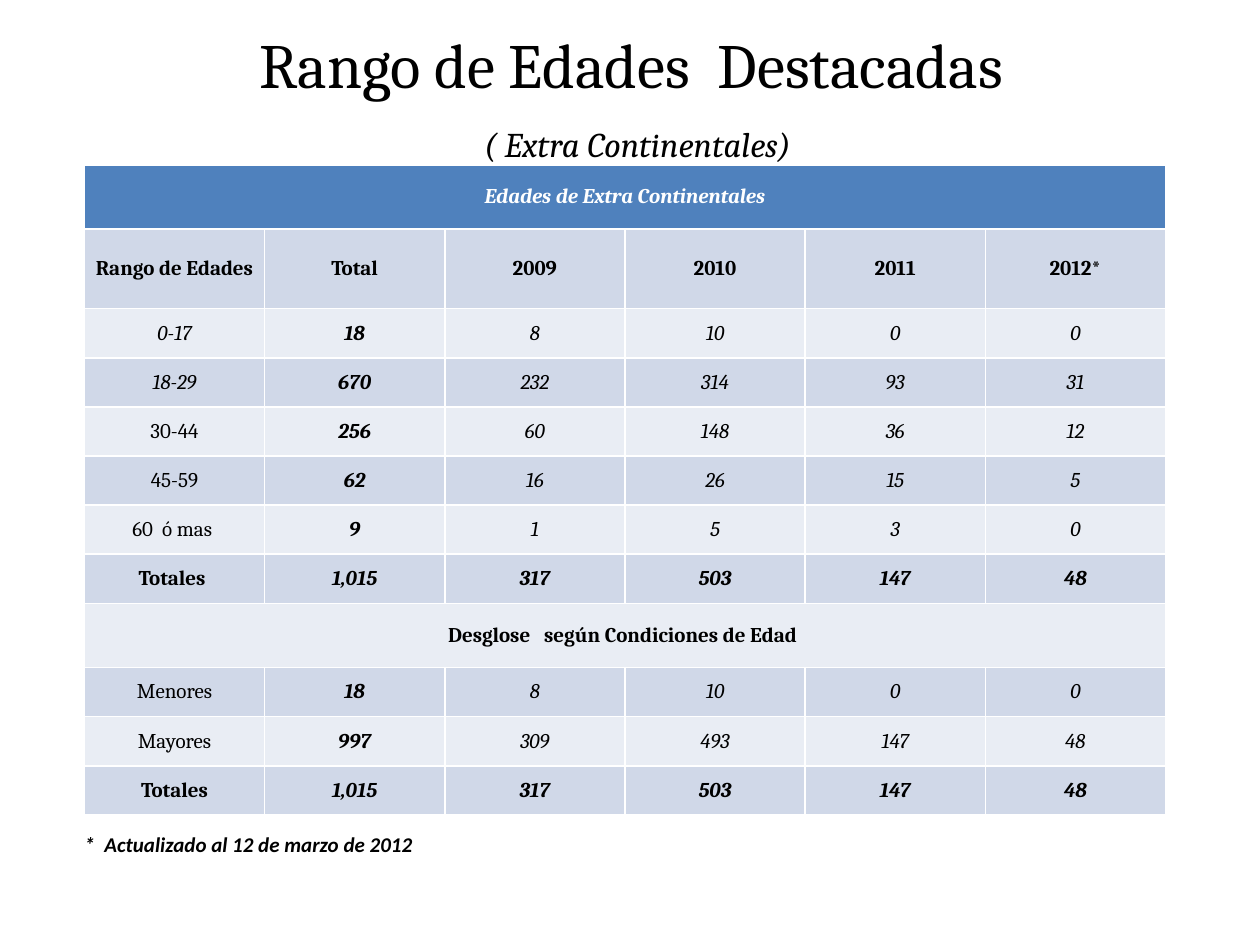
from dataclasses import dataclass

from lxml.etree import SubElement as Sub
from pptx import Presentation
from pptx.dml.color import RGBColor as Color
from pptx.enum.text import MSO_ANCHOR as Anchor, MSO_AUTO_SIZE as Fit, PP_ALIGN as Align
from pptx.oxml.ns import qn
from pptx.util import Inches, Pt

HUES = {"head": "4F81BD", "dark": "D0D8E8", "light": "E9EDF4",
        "white": "FFFFFF", "black": "000000"}
COLS = 6


@dataclass
class Row:
    texts: tuple[str, ...]
    high: float = 0.39
    bold: bool = False
    slant: bool = True
    label: bool = False
    span: int = 1


ROWS = [
    Row(("Edades de Extra Continentales",), 0.51, bold=True, label=True, span=COLS),
    Row(("Rango de Edades", "Total", "2009", "2010", "2011", "2012*"),
        0.63, bold=True, slant=False),
    Row(("0-17", "18", "8", "10", "0", "0"), label=True),
    Row(("18-29", "670", "232", "314", "93", "31"), label=True),
    Row(("30-44", "256", "60", "148", "36", "12")),
    Row(("45-59", "62", "16", "26", "15", "5")),
    Row(("60  ó mas ", "9", "1", "5", "3", "0")),
    Row(("Totales ", "1,015", "317", "503", "147", "48"), bold=True),
    Row(("Desglose   según Condiciones de Edad ",), 0.51, bold=True, span=COLS),
    Row(("Menores", "18", "8", "10", "0", "0")),
    Row(("Mayores", "997", "309", "493", "147", "48")),
    Row(("Totales", "1,015", "317", "503", "147", "48"), bold=True),
    Row(("*  Actualizado al 12 de marzo de 2012",), 0.34, bold=True, label=True, span=2),
]
LAST = len(ROWS) - 1


def edge(cell, side: str, width: float) -> None:
    line = Sub(cell._tc.get_or_add_tcPr(), qn(f"a:ln{side}"), w=str(Pt(width)))
    fill = Sub(line, qn("a:solidFill"))
    Sub(fill, qn("a:srgbClr"), val=HUES["white"])


def paint(cell, row: Row, r: int, c: int) -> None:
    cell.margin_left = cell.margin_right = 0
    cell.margin_top = cell.margin_bottom = 0
    cell.vertical_anchor = Anchor.BOTTOM if r == LAST else Anchor.MIDDLE
    for side in "LRTB":
        thick = (r, side) in ((0, "B"), (1, "T"))
        edge(cell, side, 1.5 if thick else 1)
    if r == LAST:
        cell.fill.background()
    else:
        cell.fill.solid()
        hue = "head" if r == 0 else "dark" if r % 2 else "light"
        cell.fill.fore_color.rgb = Color.from_string(HUES[hue])
    if c < len(row.texts):
        cell.text = row.texts[c]
    para = cell.text_frame.paragraphs[0]
    para.alignment = Align.LEFT if r == LAST else Align.CENTER
    font = para.font
    font.name = "Calibri" if r == LAST else "Cambria"
    font.size = Pt(12)
    font.bold = row.bold or (c == 1 and row.span == 1)
    font.italic = row.label if c == 0 else row.slant
    font.color.rgb = Color.from_string(HUES["white" if r == 0 else "black"])


def add_grid(slide) -> None:
    frame = slide.shapes.add_table(len(ROWS), COLS, Inches(0.67), Inches(1.31),
                                   Inches(8.58), Inches(5.51))
    grid = frame.table
    grid.first_row = grid.horz_banding = False
    for r, row in enumerate(ROWS):
        grid.rows[r].height = Inches(row.high)
        for c in range(COLS):
            paint(grid.cell(r, c), row, r, c)
        if row.span > 1:
            grid.cell(r, 0).merge(grid.cell(r, row.span - 1))


def add_title(slide) -> None:
    title = slide.shapes.title
    title.left, title.top = Inches(0.51), Inches(0.61)
    title.width, title.height = Inches(9), Inches(1.25)
    frame = title.text_frame
    frame.auto_size = Fit.NONE
    frame.word_wrap = True
    frame.vertical_anchor = Anchor.BOTTOM
    frame.margin_bottom = Inches(0.52)
    para = frame.paragraphs[0]
    para.alignment = Align.CENTER
    para.font.name = "Cambria"
    para.font.color.rgb = Color.from_string(HUES["black"])
    for text, size, slant in (("Rango de Edades  Destacadas", 36, False),
                              (" ", 32.4, True),
                              ("( Extra Continentales)", 19.8, True)):
        run = para.add_run()
        run.text = text
        run.font.size = Pt(size)
        run.font.italic = slant
        if size == 36:
            para.add_line_break()


def main() -> None:
    deck = Presentation()
    deck.slide_width, deck.slide_height = Inches(10), Inches(7.5)
    slide = deck.slides.add_slide(deck.slide_layouts[5])
    add_title(slide)
    add_grid(slide)
    deck.save("out.pptx")


if __name__ == "__main__":
    main()
